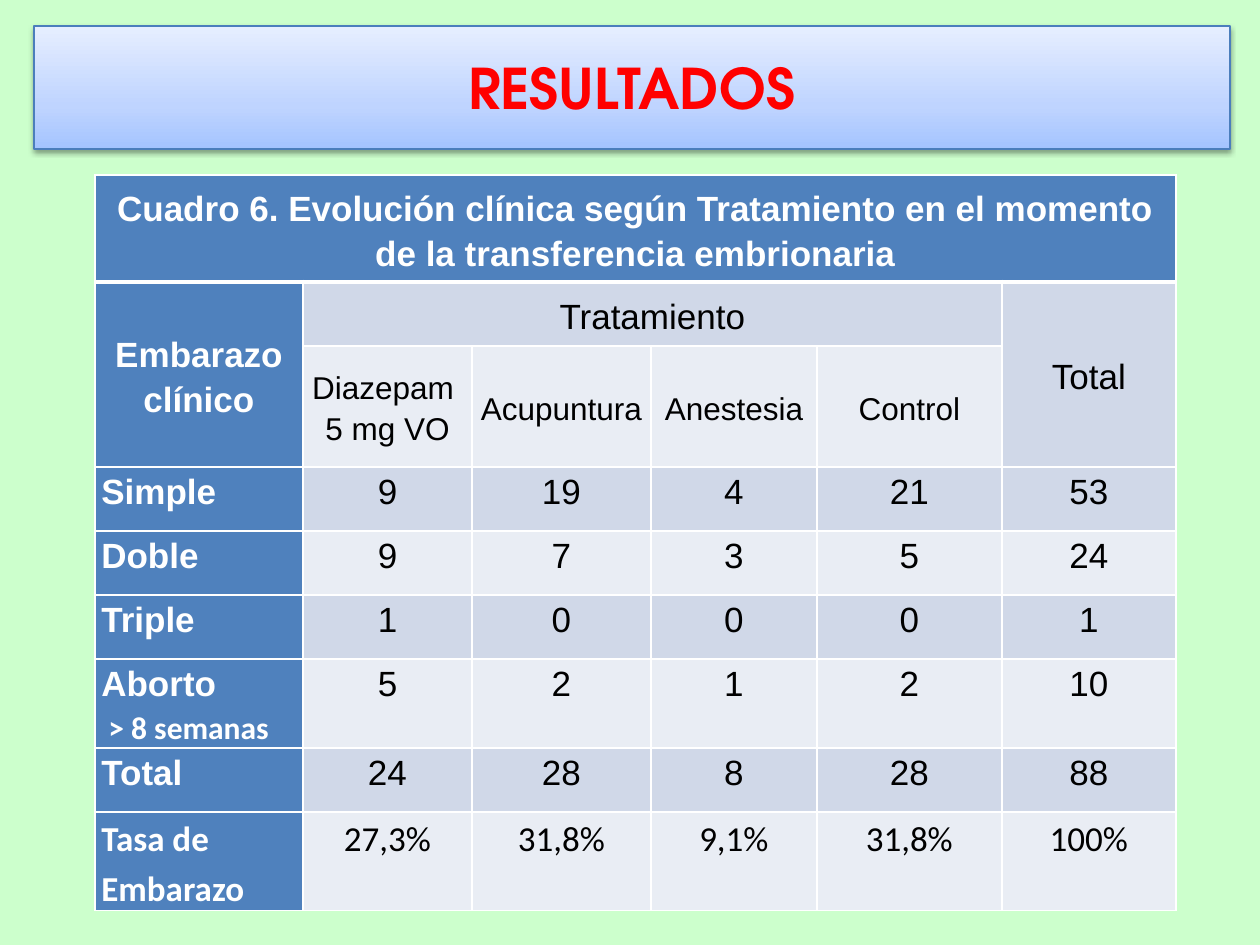
from dataclasses import dataclass

from lxml import etree
from pptx import Presentation
from pptx import util as u
from pptx.dml.color import RGBColor
from pptx.enum import text
from pptx.oxml import ns

PX = u.Inches(1) / 126


@dataclass(frozen=True)
class Theme:
    background: str = "CCFFCC"
    title: str = "FF0000"
    banner_line: str = "4B7EBC"
    banner_stops: tuple = ((0, "A4C4FF"), (35, "BFD4FF"), (100, "E6EEFF"))
    header: str = "4F81BD"
    bands: tuple = ("E9EDF4", "D0D8E8")
    light: str = "FFFFFF"
    dark: str = "000000"
    title_font: str = "TeX Gyre Adventor"
    body_font: str = "Arial"
    note_font: str = "Calibri"
    title_size: int = 32
    body_size: int = 20
    small_size: int = 18


THEME = Theme()

COLUMN_WIDTHS = (208, 169, 179, 166, 185, 174)
ROW_HEIGHTS = (107, 64, 121, 64, 64, 64, 89, 64, 98)
HEADER_ROWS = 3
RATE_ROW = 8
MERGES = ((0, 0, 0, 5), (1, 0, 2, 0), (1, 1, 1, 4), (1, 5, 2, 5))
CONTENT = (
    ("Cuadro 6. Evolución clínica según Tratamiento en el momento "
     "de la transferencia embrionaria", "", "", "", "", ""),
    ("Embarazo clínico", "Tratamiento", "", "", "", "Total"),
    ("", "Diazepam \n5 mg VO", "Acupuntura", "Anestesia", "Control", ""),
    ("Simple", "9", "19", "4", "21", "53"),
    ("Doble", "9", "7", "3", "5", "24"),
    ("Triple", "1", "0", "0", "0", "1"),
    ("Aborto\n > 8 semanas", "5", "2", "1", "2", "10"),
    ("Total", "24", "28", "8", "28", "88"),
    ("Tasa de Embarazo", "27,3%", "31,8%", "9,1%", "31,8%", "100%"),
)


def px(length):
    return u.Emu(round(length * PX))


def color(value):
    return RGBColor.from_string(value)


def add_xml(parent, markup):
    namespace = ns.nsdecls("a")
    wrapper = etree.fromstring(f"<root {namespace}>{markup}</root>")
    parent.extend(list(wrapper))


def style_font(font, name, size, value, bold):
    font.name = name
    font.size = u.Pt(size)
    font.color.rgb = color(value)
    font.bold = bold


def set_title(slide, title, left, top, width, height):
    banner = slide.shapes.title
    banner.left, banner.top = px(left), px(top)
    banner.width, banner.height = px(width), px(height)
    stops = "".join(
        f'<a:gs pos="{position * 1000}"><a:srgbClr val="{value}"/></a:gs>'
        for position, value in THEME.banner_stops
    )
    add_xml(
        banner.element.spPr,
        '<a:prstGeom prst="flowChartAlternateProcess"><a:avLst/></a:prstGeom>'
        f'<a:gradFill><a:gsLst>{stops}</a:gsLst><a:lin ang="16200000"/></a:gradFill>',
    )
    banner.line.color.rgb = color(THEME.banner_line)
    banner.line.width = u.Pt(0.75)
    add_xml(
        banner.element.spPr,
        '<a:effectLst><a:outerShdw blurRad="39370" dist="20320" dir="5400000" '
        f'rotWithShape="0"><a:srgbClr val="{THEME.dark}"><a:alpha val="38000"/>'
        '</a:srgbClr></a:outerShdw></a:effectLst>',
    )
    frame = banner.text_frame
    frame.text = title
    frame.auto_size = text.MSO_AUTO_SIZE.NONE
    frame.vertical_anchor = text.MSO_ANCHOR.MIDDLE
    paragraph = frame.paragraphs[0]
    paragraph.alignment = text.PP_ALIGN.CENTER
    style_font(paragraph.font, THEME.title_font, THEME.title_size, THEME.title, True)


def set_borders(cell, row):
    widths = {
        "L": 1,
        "R": 1,
        "T": 3 if row == 1 else 1,
        "B": 3 if row == 0 else 1,
    }
    properties = cell._tc.get_or_add_tcPr()
    for side, width in widths.items():
        add_xml(
            properties,
            f'<a:ln{side} w="{u.Pt(width)}"><a:solidFill>'
            f'<a:srgbClr val="{THEME.light}"/></a:solidFill></a:ln{side}>',
        )


def format_cell(cell, row, column, content):
    is_header = row == 0 or column == 0
    cell.margin_left = cell.margin_right = u.Inches(0.05)
    cell.margin_top = cell.margin_bottom = 0
    set_borders(cell, row)
    cell.fill.solid()
    cell.fill.fore_color.rgb = color(THEME.header if is_header else THEME.bands[row % 2])
    in_head = row < HEADER_ROWS
    cell.vertical_anchor = text.MSO_ANCHOR.MIDDLE if in_head else text.MSO_ANCHOR.TOP
    cell.text = content
    for index, paragraph in enumerate(cell.text_frame.paragraphs):
        is_note = column == 0 and index > 0
        is_small = is_note or row == HEADER_ROWS - 1
        centred = in_head or column > 0
        paragraph.alignment = text.PP_ALIGN.CENTER if centred else text.PP_ALIGN.LEFT
        paragraph.line_spacing = 1.15
        style_font(
            paragraph.font,
            THEME.note_font if is_note or row == RATE_ROW else THEME.body_font,
            THEME.small_size if is_small else THEME.body_size,
            THEME.light if is_header else THEME.dark,
            is_header,
        )


def add_results_table(slide, left, top):
    table = slide.shapes.add_table(
        len(ROW_HEIGHTS), len(COLUMN_WIDTHS), px(left), px(top),
        px(sum(COLUMN_WIDTHS)), px(sum(ROW_HEIGHTS)),
    ).table
    for column, width in zip(table.columns, COLUMN_WIDTHS):
        column.width = px(width)
    for row, height in zip(table.rows, ROW_HEIGHTS):
        row.height = px(height)
    for first_row, first_column, last_row, last_column in MERGES:
        table.cell(first_row, first_column).merge(table.cell(last_row, last_column))
    for row, values in enumerate(CONTENT):
        for column, content in enumerate(values):
            format_cell(table.cell(row, column), row, column, content)


def main():
    presentation = Presentation()
    presentation.slide_width, presentation.slide_height = px(1260), px(945)
    slide = presentation.slides.add_slide(presentation.slide_layouts[5])
    slide.background.fill.solid()
    slide.background.fill.fore_color.rgb = color(THEME.background)
    set_title(slide, "RESULTADOS", 34, 26, 1196, 123)
    add_results_table(slide, 95, 175)
    presentation.save("out.pptx")


if __name__ == "__main__":
    main()
